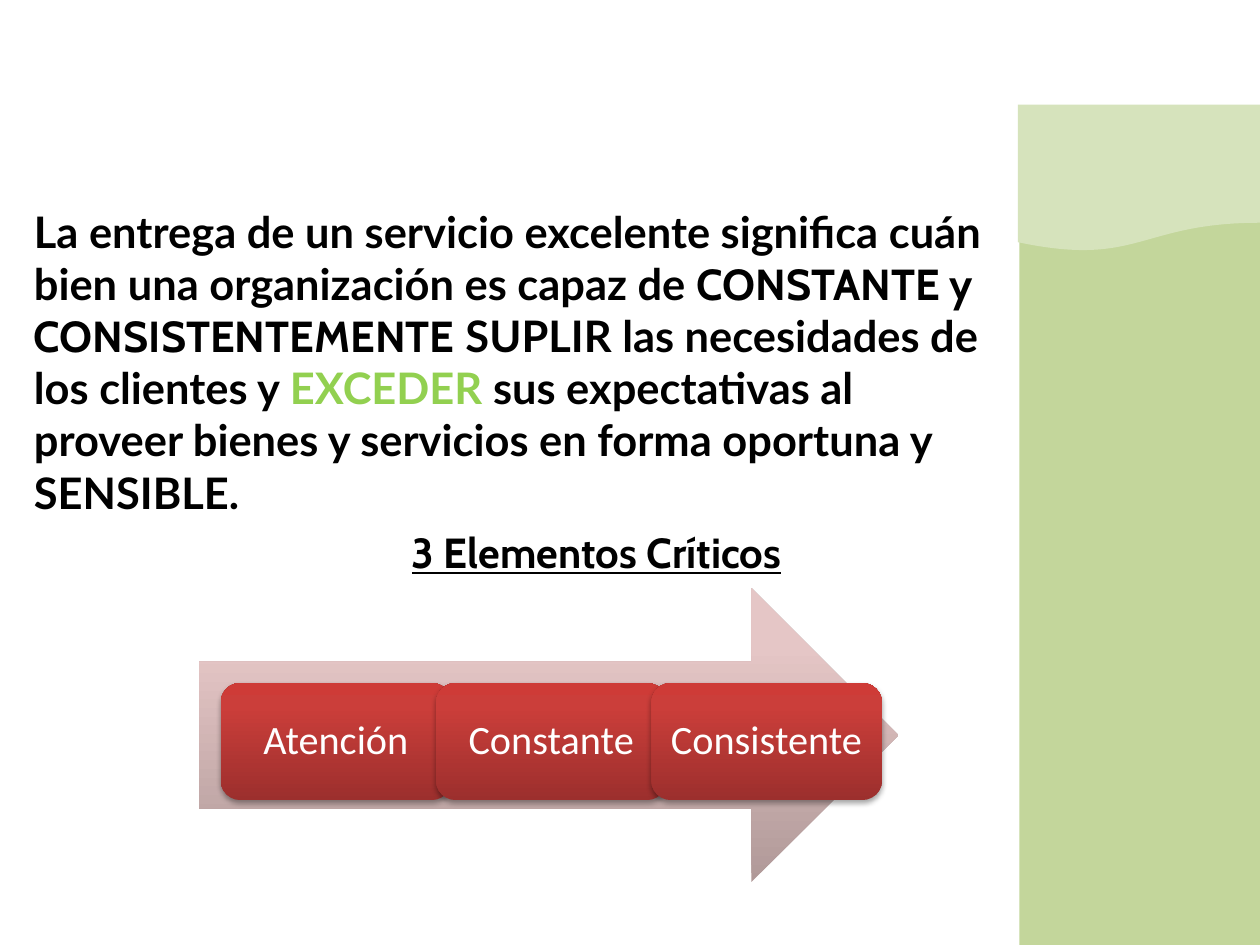
from lxml import etree
from pptx import Presentation
from pptx.dml.color import RGBColor
from pptx.enum.shapes import MSO_SHAPE
from pptx.enum.text import MSO_ANCHOR, MSO_AUTO_SIZE, PP_ALIGN
from pptx.oxml.ns import qn
from pptx.util import Cm, Pt

RECTANGLE = MSO_SHAPE.RECTANGLE
WAVE = MSO_SHAPE.FLOWCHART_DOCUMENT
ARROW = MSO_SHAPE.RIGHT_ARROW
ROUNDED = MSO_SHAPE.ROUNDED_RECTANGLE
MIDDLE = MSO_ANCHOR.MIDDLE
NO_AUTOFIT = MSO_AUTO_SIZE.NONE
CENTER = PP_ALIGN.CENTER

BLACK, WHITE, GREEN = "000000", "FFFFFF", "92D050"
ARROW_STOPS = [(0, "B09998"), (80, "E5C6C6"), (100, "E6C7C6")]
BOX_STOPS = [(0, "9C2F2D"), (80, "CB3E3A"), (100, "CE3B37")]

DEFINITION = [
    ("La entrega de un servicio excelente significa cuán bien una "
     "organización es capaz de ", "Lato", BLACK),
    ("CONSTANTE y CONSISTENTEMENTE", "Cabin", BLACK),
    (" SUPLIR las necesidades de los clientes y ", "Lato", BLACK),
    ("EXCEDER ", "Lato", GREEN),
    ("sus expectativas al proveer bienes y servicios en forma oportuna y "
     "SENSIBLE.", "Lato", BLACK),
]
ELEMENTS = ["Atención", "Constante", "Consistente"]


def color(value):
    return RGBColor.from_string(value)


def format_font(font, name, size, value, bold=False):
    font.name = name
    font.size = Pt(size)
    font.bold = bold
    font.color.rgb = color(value)


def add_plain_shape(slide, kind, left, top, width, height):
    """Add a shape, measured in centimetres, without line or shadow."""
    shape = slide.shapes.add_shape(kind, Cm(left), Cm(top), Cm(width), Cm(height))
    shape.line.fill.background()
    shape.shadow.inherit = False
    return shape


def add_solid_shape(slide, kind, position, value):
    shape = add_plain_shape(slide, kind, *position)
    shape.fill.solid()
    shape.fill.fore_color.rgb = color(value)


def fill_upward(shape, stops):
    """Fill with a gradient whose first stop is at the bottom."""
    shape.fill.gradient()
    shape.fill.gradient_angle = 90
    stop_list = shape._element.spPr.find(".//" + qn("a:gsLst"))
    for stop in list(stop_list):
        stop_list.remove(stop)
    for percent, value in stops:
        stop = etree.SubElement(stop_list, qn("a:gs"), pos=str(percent * 1000))
        etree.SubElement(stop, qn("a:srgbClr"), val=value)


def add_shadow(shape):
    effects = shape._element.spPr.find(qn("a:effectLst"))
    shadow = etree.SubElement(
        effects, qn("a:outerShdw"), blurRad=str(Pt(3.1)), dist=str(Pt(1.8)),
        dir="5400000", rotWithShape="0")
    shade = etree.SubElement(shadow, qn("a:srgbClr"), val=BLACK)
    etree.SubElement(shade, qn("a:alpha"), val="35000")


def remove_bullet(paragraph, indent):
    properties = paragraph._p.get_or_add_pPr()
    properties.set("marL", str(Cm(indent)))
    properties.set("indent", "0")
    etree.SubElement(properties, qn("a:buNone"))


def fill_body(body):
    body.left, body.top, body.width, body.height = Cm(0.43), Cm(4.01), Cm(19.89), Cm(8.74)
    frame = body.text_frame
    frame.word_wrap = True
    frame.auto_size = NO_AUTOFIT

    definition = frame.paragraphs[0]
    remove_bullet(definition, 0)
    definition.space_before = Pt(0)
    for text, name, value in DEFINITION:
        run = definition.add_run()
        run.text = text
        format_font(run.font, name, 24.8, value, bold=True)

    heading = frame.add_paragraph()
    remove_bullet(heading, 7.62)
    heading.space_before = Pt(5)
    heading.text = "3 Elementos Críticos"
    font = heading.runs[0].font
    format_font(font, "Cabin", 24, BLACK, bold=True)
    font.underline = True


def add_element_box(slide, text, left):
    box = add_plain_shape(slide, ROUNDED, left, 13.77, 4.65, 2.36)
    fill_upward(box, BOX_STOPS)
    add_shadow(box)
    frame = box.text_frame
    frame.word_wrap = True
    frame.vertical_anchor = MIDDLE
    frame.text = text
    paragraph = frame.paragraphs[0]
    paragraph.alignment = CENTER
    paragraph.line_spacing = 0.9
    format_font(paragraph.runs[0].font, "Calibri", 23, WHITE)


def main():
    presentation = Presentation()
    presentation.slide_width, presentation.slide_height = Cm(25.4), Cm(19.05)
    slide = presentation.slides.add_slide(presentation.slide_layouts[1])
    title = slide.shapes.title._element
    title.getparent().remove(title)

    add_solid_shape(slide, RECTANGLE, (20.55, 2.82, 4.85, 16.23), "C3D69B")
    add_solid_shape(slide, WAVE, (20.52, 2.11, 4.88, 2.97), "D6E3BC")
    fill_body(slide.placeholders[1])

    arrow = add_plain_shape(slide, ARROW, 4.01, 11.86, 14.1, 5.92)
    fill_upward(arrow, ARROW_STOPS)
    for index, text in enumerate(ELEMENTS):
        add_element_box(slide, text, 4.45 + index * 4.34)

    presentation.save("out.pptx")


if __name__ == "__main__":
    main()
